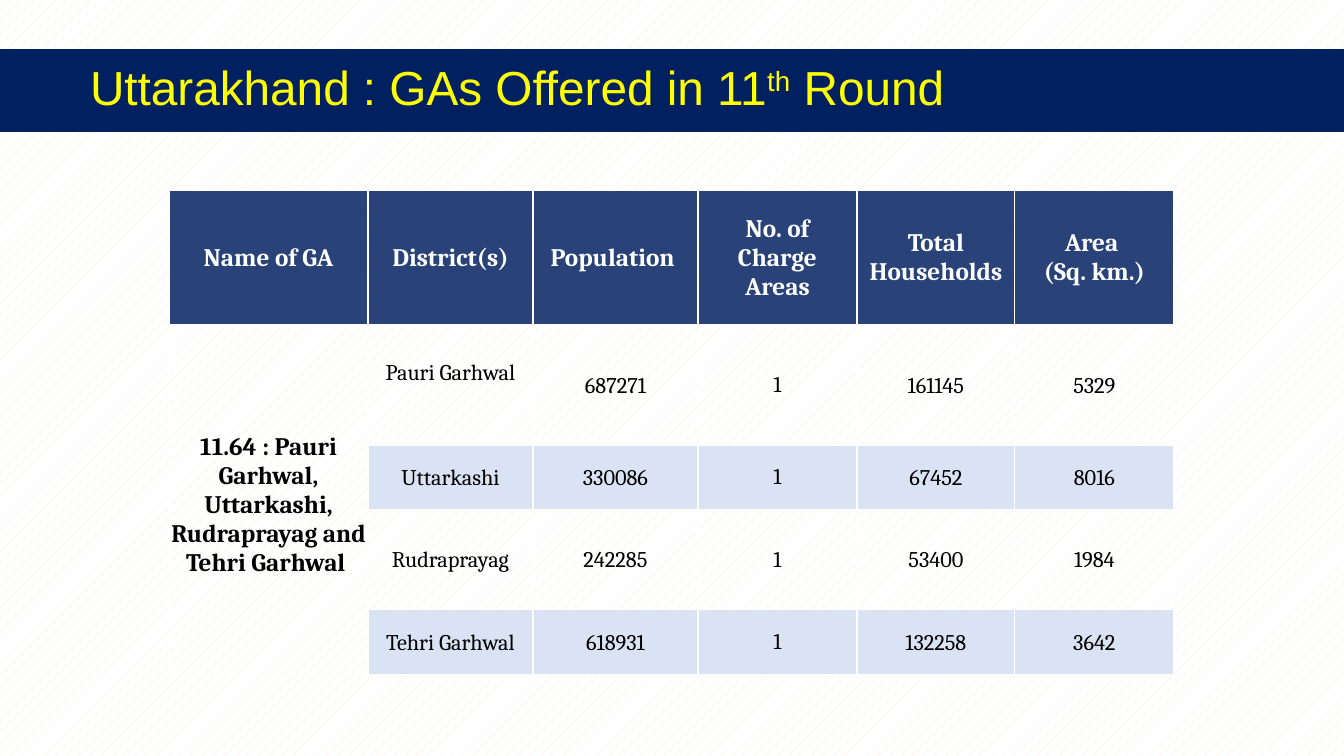
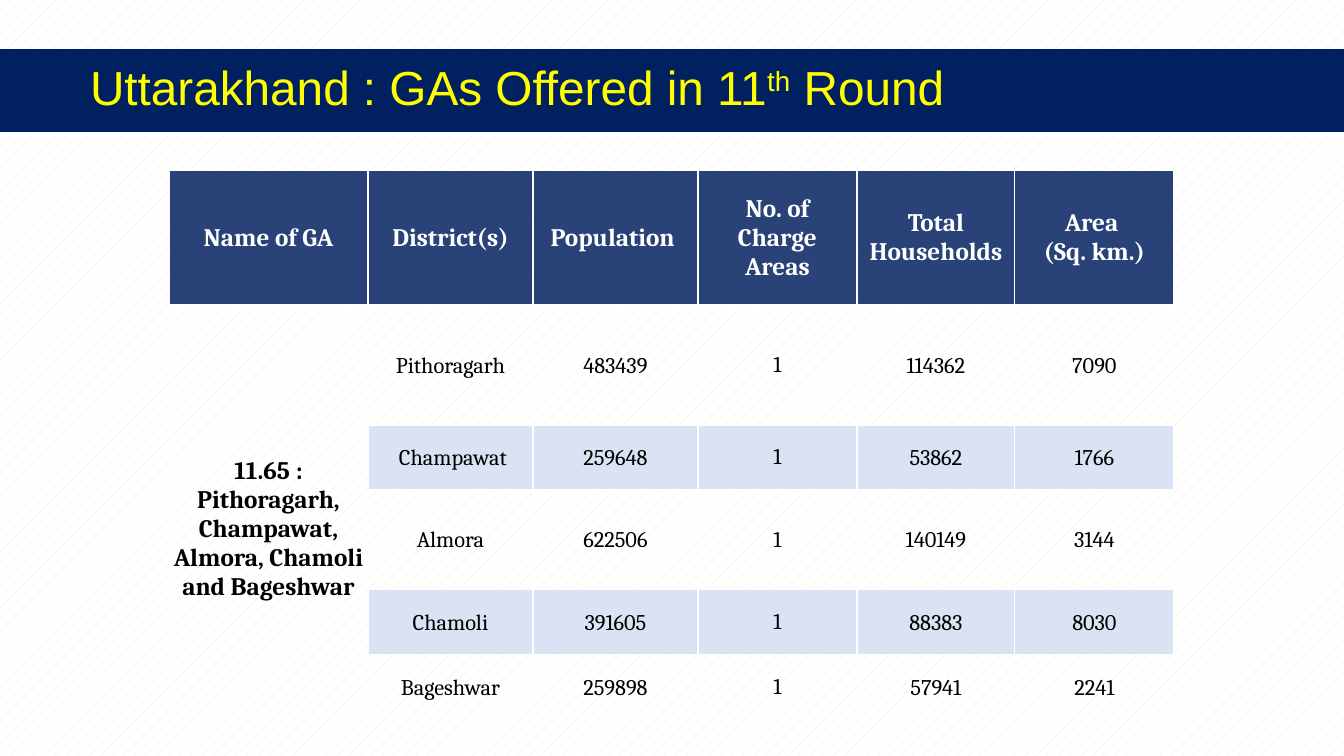
from lxml.etree import SubElement
from pptx import Presentation
from pptx.dml.color import RGBColor
from pptx.enum.dml import MSO_PATTERN
from pptx.enum.shapes import MSO_SHAPE
from pptx.enum.text import MSO_ANCHOR, PP_ALIGN
from pptx.oxml.ns import qn
from pptx.util import Emu, Pt

PX_PER_INCH = 100.8
NAVY, YELLOW, WHITE, BLACK = "002060", "FFFF00", "FFFFFF", "000000"
PEACH, PALE_BLUE = "FBE5D6", "DAE3F3"
NO_STYLE_NO_GRID = "{2D5ABB26-0587-4C30-8999-92F81FD0307C}"

TITLE_RUNS = [("Uttarakhand : GAs Offered in 11", 0), ("th", 30000), (" Round", 0)]
HEADERS = ["Name of GA", "District(s)", "Population ", "No. of Charge Areas",
           "Total Households", "Area \n(Sq. km.)"]
COLUMN_WIDTHS = [199, 165, 165, 159, 158, 159]
ROW_HEIGHTS = [136, 119, 65, 100, 65, 65]
CHARGE_AREAS_COLUMN = 3

# Table top, extra space above the area name, area name, district rows
AREAS = [
    (190, 10, "11.64 : Pauri Garhwal, Uttarkashi, Rudraprayag and Tehri Garhwal ", [
        ("Pauri Garhwal", 687271, 1, 161145, 5329),
        ("Uttarkashi", 330086, 1, 67452, 8016),
        ("Rudraprayag", 242285, 1, 53400, 1984),
        ("Tehri Garhwal", 618931, 1, 132258, 3642),
    ]),
    (170, 33, "11.65 : Pithoragarh, Champawat, Almora, Chamoli and Bageshwar", [
        ("Pithoragarh", 483439, 1, 114362, 7090),
        (" Champawat", 259648, 1, 53862, 1766),
        ("Almora", 622506, 1, 140149, 3144),
        ("Chamoli", 391605, 1, 88383, 8030),
        ("Bageshwar", 259898, 1, 57941, 2241),
    ]),
]


def px(length):
    return Emu(round(length * 914400 / PX_PER_INCH))


def rgb(value):
    return RGBColor.from_string(value)


deck = Presentation()
deck.slide_width, deck.slide_height = px(1344), px(756)

# Shared background
background = deck.slide_master.background.fill
background.patterned()
background.pattern = MSO_PATTERN.PERCENT_10
background.fore_color.rgb = rgb(PEACH)
background.back_color.rgb = rgb(WHITE)

for table_top, name_offset, area_name, districts in AREAS:
    page = deck.slides.add_slide(deck.slide_layouts[6])

    # Title band
    band = page.shapes.add_shape(MSO_SHAPE.RECTANGLE, 0, px(49), px(1344), px(83))
    band.shadow.inherit = False
    band.fill.solid()
    band.fill.fore_color.rgb = rgb(NAVY)
    band.line.fill.background()
    frame = band.text_frame
    frame.word_wrap = True
    frame.vertical_anchor = MSO_ANCHOR.MIDDLE
    frame.margin_left = px(90)
    para = frame.paragraphs[0]
    para.alignment = PP_ALIGN.LEFT
    para.line_spacing = 0.9
    for text, baseline in TITLE_RUNS:
        span = para.add_run()
        span.text = text
        span.font.name = "Arial"
        span.font.size = Pt(34.1)
        span.font.color.rgb = rgb(YELLOW)
        if baseline:
            span.font._element.set("baseline", str(baseline))

    # Table grid
    rows = [HEADERS] + [("", *district) for district in districts]
    heights = ROW_HEIGHTS[:len(rows)]
    table = page.shapes.add_table(len(rows), len(HEADERS), px(169), px(table_top),
                                  px(sum(COLUMN_WIDTHS)), px(sum(heights))).table
    table._tbl.tblPr.find(qn("a:tableStyleId")).text = NO_STYLE_NO_GRID
    table.horz_banding = False
    for column, width in zip(table.columns, COLUMN_WIDTHS):
        column.width = px(width)
    for row, height in zip(table.rows, heights):
        row.height = px(height)
    table.cell(1, 0).merge(table.cell(len(rows) - 1, 0))

    # Cells
    for row_index, values in enumerate(rows):
        is_header = row_index == 0
        for column_index, value in enumerate(values):
            cell = table.cell(row_index, column_index)
            is_name = column_index == 0 and not is_header
            cell.vertical_anchor = MSO_ANCHOR.MIDDLE
            if not is_header and column_index != CHARGE_AREAS_COLUMN:
                cell.margin_left = cell.margin_right = cell.margin_top = px(1)
                cell.margin_bottom = 0

            # Borders
            properties = cell._tc.get_or_add_tcPr()
            for side in "LRTB":
                is_thick = (is_header and side == "B") or (row_index == 1 and side == "T")
                border = SubElement(properties, qn(f"a:ln{side}"), w=str(Pt(3 if is_thick else 1)))
                paint = SubElement(border, qn("a:solidFill"))
                SubElement(paint, qn("a:srgbClr"), val=WHITE)

            # Fill
            if is_header:
                cell.fill.solid()
                cell.fill.fore_color.rgb = rgb(NAVY)
                color = properties.find(qn("a:solidFill")).find(qn("a:srgbClr"))
                SubElement(color, qn("a:alpha"), val="84000")
            elif row_index % 2 == 0 and not is_name:
                cell.fill.solid()
                cell.fill.fore_color.rgb = rgb(PALE_BLUE)
            else:
                cell.fill.background()

            # Text
            if is_name and row_index > 1:
                continue
            if is_name:
                value = area_name
                cell.margin_top = px(name_offset)
            if value == "Pauri Garhwal":
                cell.margin_bottom = px(25)
            for line_index, line in enumerate(str(value).split("\n")):
                frame = cell.text_frame
                para = frame.add_paragraph() if line_index else frame.paragraphs[0]
                para.alignment = PP_ALIGN.CENTER
                span = para.add_run()
                span.text = line
                span.font.name = "Cambria"
                span.font.size = Pt(18 if is_header or is_name else 16)
                span.font.bold = is_header or is_name
                span.font.color.rgb = rgb(WHITE if is_header else BLACK)

deck.save("out.pptx")
